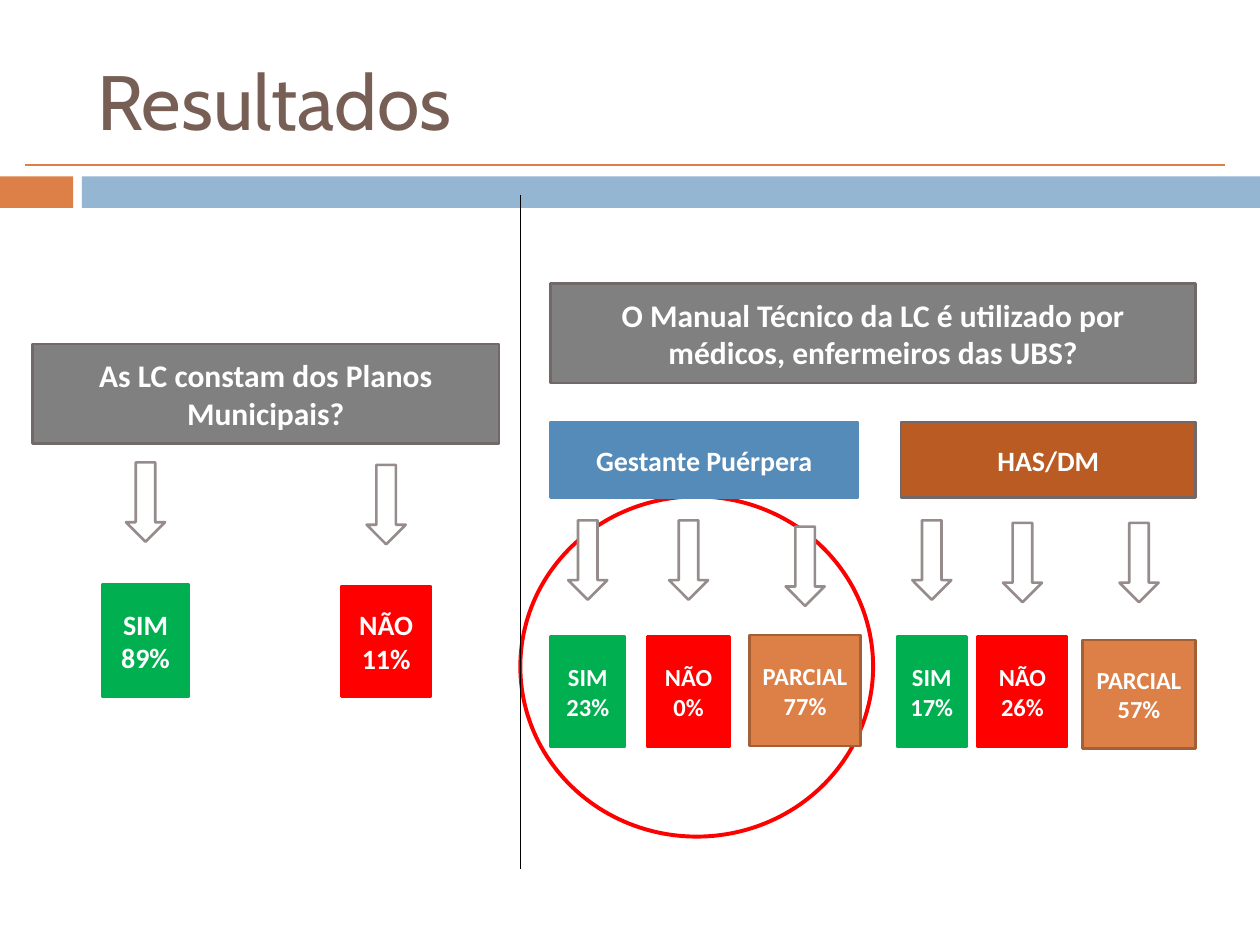
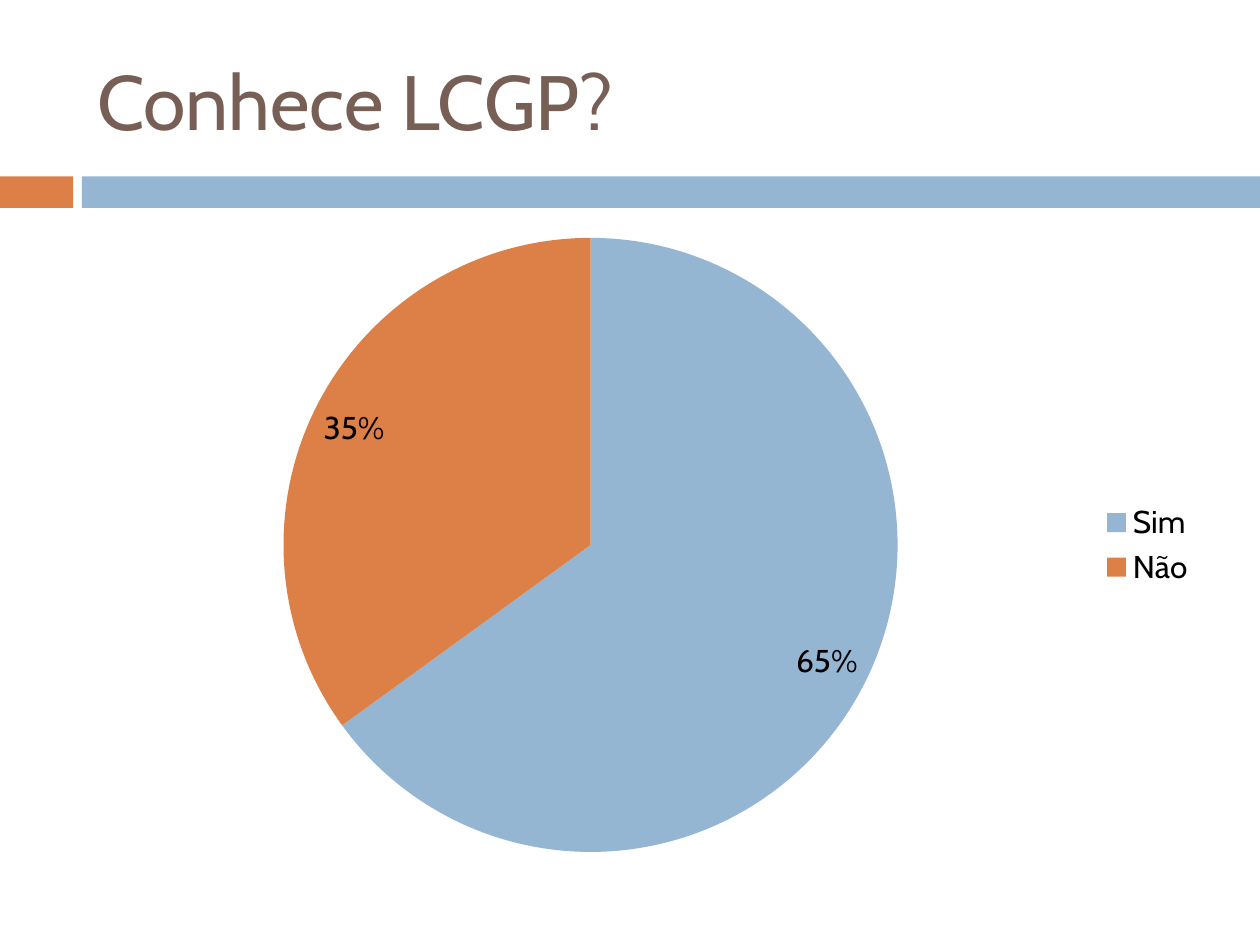
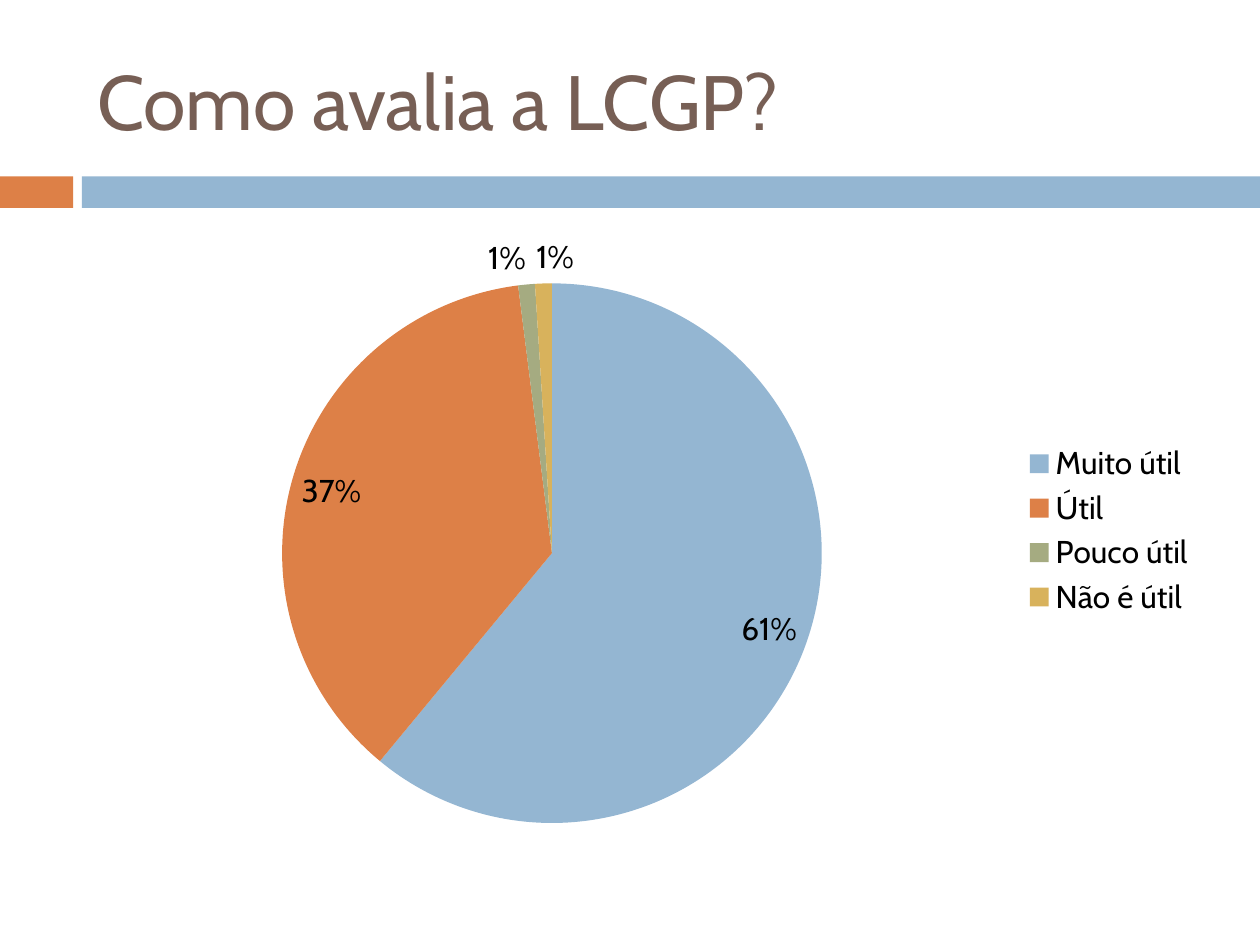
from dataclasses import dataclass

from lxml import etree
from pptx import Presentation
from pptx.chart.data import CategoryChartData
from pptx.dml.color import RGBColor
from pptx.enum.chart import XL_CHART_TYPE, XL_LABEL_POSITION, XL_LEGEND_POSITION
from pptx.enum.shapes import MSO_CONNECTOR, MSO_SHAPE
from pptx.enum.text import MSO_ANCHOR, PP_ALIGN
from pptx.oxml.ns import qn
from pptx.util import Inches, Pt

RECT, ELLIPSE, DOWN_ARROW = MSO_SHAPE.RECTANGLE, MSO_SHAPE.OVAL, MSO_SHAPE.DOWN_ARROW
STRAIGHT = MSO_CONNECTOR.STRAIGHT
PIE = XL_CHART_TYPE.PIE
BEST_FIT = XL_LABEL_POSITION.BEST_FIT
LEGEND_RIGHT = XL_LEGEND_POSITION.RIGHT
MIDDLE = MSO_ANCHOR.MIDDLE
LEFT, CENTER = PP_ALIGN.LEFT, PP_ALIGN.CENTER
TITLE_ONLY = 5


@dataclass(frozen=True)
class Theme:
    # Fonts and sizes
    title_font: str = "Cabin"
    box_font: str = "Calibri"
    title_size: int = 44
    question_size: int = 18
    group_size: int = 16
    small_size: int = 14
    chart_size: int = 18
    outline: float = 1.5
    # Colours
    title: str = "775F55"
    white: str = "FFFFFF"
    black: str = "000000"
    blue: str = "94B6D2"
    orange: str = "DD8047"
    olive: str = "A5AB81"
    gold: str = "D8B25C"
    grey: str = "808080"
    grey_line: str = "726868"
    arrow_line: str = "968C8C"
    green: str = "00B050"
    red: str = "FF0000"
    orange_line: str = "A35F35"
    deep_blue: str = "558BB8"
    rust: str = "B95B22"


T = Theme()
TITLE_BOX = (0.67, 0.25, 8.92, 1.08)
BANDS = [((0, 1.4, 0.58, 0.25), T.orange), ((0.65, 1.4, 9.35, 0.25), T.blue)]
ARROW_W, ARROW_H = 0.31, 0.63
ANSWER_COLORS = {  # fill, line
    "SIM": (T.green, T.green),
    "NÃO": (T.red, T.red),
    "PARCIAL": (T.orange, T.orange_line),
}


# Shared helpers
def rgb(value):
    return RGBColor.from_string(value)


def set_all(obj, **values):
    for name, value in values.items():
        setattr(obj, name, value)


def set_font(font, name, size, color, bold=False):
    set_all(font, name=name, size=Pt(size), bold=bold)
    font.color.rgb = rgb(color)


def place(sp, box):
    set_all(sp, **dict(zip(("left", "top", "width", "height"), map(Inches, box))))


def add_box(slide, kind, box, fill, line=None, width=T.outline):
    sp = slide.shapes.add_shape(kind, *map(Inches, box))
    sp.shadow.inherit = False
    sp.fill.solid()
    sp.fill.fore_color.rgb = rgb(fill)
    if line:
        sp.line.color.rgb = rgb(line)
        sp.line.width = Pt(width)
    else:
        sp.line.fill.background()
    return sp


def add_label(slide, box, lines, size, fill, line):
    tf = add_box(slide, RECT, box, fill, line).text_frame
    set_all(tf, word_wrap=True, vertical_anchor=MIDDLE)
    for i, text in enumerate(lines):
        p = tf.add_paragraph() if i else tf.paragraphs[0]
        p.alignment = CENTER
        r = p.add_run()
        r.text = text
        set_font(r.font, T.box_font, size, T.white, bold=True)


def add_line(slide, x1, y1, x2, y2, color, width):
    cx = slide.shapes.add_connector(STRAIGHT, *map(Inches, (x1, y1, x2, y2)))
    cx.line.color.rgb = rgb(color)
    cx.line.width = Pt(width)
    etree.SubElement(cx.element.spPr, qn("a:effectLst"))


# Layout: title position and the two bands
def set_up_layout(layout, slide):
    place(layout.placeholders[0], TITLE_BOX)
    for i, (box, color) in enumerate(BANDS):
        sp = add_box(slide, RECT, box, color).element
        sp.nvSpPr.cNvPr.set("id", str(100 + i))
        layout.shapes.element.insert(2 + i, sp)


def set_title(slide, text):
    tf = slide.shapes.title.text_frame
    tf.vertical_anchor = MIDDLE
    p = tf.paragraphs[0]
    p.alignment = LEFT
    r = p.add_run()
    r.text = text
    set_font(r.font, T.title_font, T.title_size, T.title)


# Results slide
def add_question(slide, x, y, w, text):
    add_label(slide, (x, y, w, 0.79), [text], T.question_size, T.grey, T.grey_line)


def add_answers(slide, x, y, answers, size):
    """Each answer: name, share, offset, width, arrow drop, box drop, box height."""
    for name, share, dx, w, arrow_dy, dy, h in answers:
        add_label(slide, (x + dx, y + dy, w, h), [name, share], size, *ANSWER_COLORS[name])
        arrow_x = x + dx + (w - ARROW_W) / 2
        add_box(slide, DOWN_ARROW, (arrow_x, y + arrow_dy, ARROW_W, ARROW_H),
                T.white, T.arrow_line)


def add_group(slide, x, y, w, name, fill, line, answers):
    add_label(slide, (x, y, w, 0.6), [name], T.group_size, fill, line)
    add_answers(slide, x, y + 0.78, answers, T.small_size)


def plans_panel(slide, x, y):
    add_question(slide, x, y, 3.7, "As LC constam dos Planos Municipais?")
    add_answers(slide, x, y + 0.94, [
        ("SIM", "89%", 0.55, 0.69, 0, 0.97, 0.89),
        ("NÃO", "11%", 2.45, 0.71, 0.02, 0.98, 0.88),
    ], T.group_size)


def manual_panel(slide, x, y):
    # Highlight ring behind the first group
    add_box(slide, ELLIPSE, (x - 0.24, y + 1.69, 2.8, 2.7), T.white, T.red, 2.25)
    add_question(slide, x, y, 5.12,
                 "O Manual Técnico da LC é utilizado por médicos, enfermeiros das UBS?")
    add_group(slide, x, y + 1.1, 2.44, "Gestante Puérpera", T.deep_blue, T.deep_blue, [
        ("SIM", "23%", 0, 0.59, 0, 0.92, 0.88),
        ("NÃO", "0%", 0.77, 0.65, 0, 0.92, 0.88),
        ("PARCIAL", "77%", 1.58, 0.88, 0.05, 0.91, 0.88),
    ])
    add_group(slide, x + 2.78, y + 1.1, 2.34, "HAS/DM", T.rust, T.grey_line, [
        ("SIM", "17%", -0.03, 0.55, 0, 0.92, 0.88),
        ("NÃO", "26%", 0.61, 0.71, 0.02, 0.92, 0.88),
        ("PARCIAL", "57%", 1.44, 0.9, 0.02, 0.95, 0.86),
    ])


def results_slide(slide):
    set_title(slide, "Resultados")
    add_line(slide, 0.2, 1.31, 9.72, 1.31, T.orange, T.outline)
    plans_panel(slide, 0.26, 2.73)
    manual_panel(slide, 4.37, 2.25)
    add_line(slide, 4.13, 1.55, 4.13, 6.9, T.black, 0.79)


# Pie chart slides
def pie_slide(slide, title, box, shares):
    set_title(slide, title)
    data = CategoryChartData()
    data.categories = list(shares)
    data.add_series("Series 1", list(shares.values()))
    chart = slide.shapes.add_chart(PIE, *map(Inches, box), data).chart
    set_all(chart, has_title=False, has_legend=True)
    set_font(chart.font, T.title_font, T.chart_size, T.black)
    set_all(chart.legend, position=LEGEND_RIGHT, include_in_layout=False)

    plot = chart.plots[0]
    set_all(plot, vary_by_categories=True, has_data_labels=True)
    set_all(plot.data_labels, show_percentage=True, show_value=False, number_format="0%",
            number_format_is_linked=False, position=BEST_FIT)
    for i, color in zip(range(len(shares)), (T.blue, T.orange, T.olive, T.gold)):
        fill = plot.series[0].points[i].format.fill
        fill.solid()
        fill.fore_color.rgb = rgb(color)


def main():
    prs = Presentation()
    set_all(prs, slide_width=Inches(10), slide_height=Inches(7.5))
    layout = prs.slide_layouts[TITLE_ONLY]
    results, known, rating = (prs.slides.add_slide(layout) for _ in range(3))
    set_up_layout(layout, results)

    results_slide(results)
    pie_slide(known, "Conhece LCGP?", (0.67, 1.75, 8.92, 5.15), {"Sim": 65, "Não": 35})
    pie_slide(rating, "Como avalia a LCGP?", (0.67, 1.75, 8.92, 4.92),
              {"Muito útil": 61, "Útil": 37, "Pouco útil": 1, "Não é útil": 1})
    prs.save("out.pptx")


if __name__ == "__main__":
    main()
